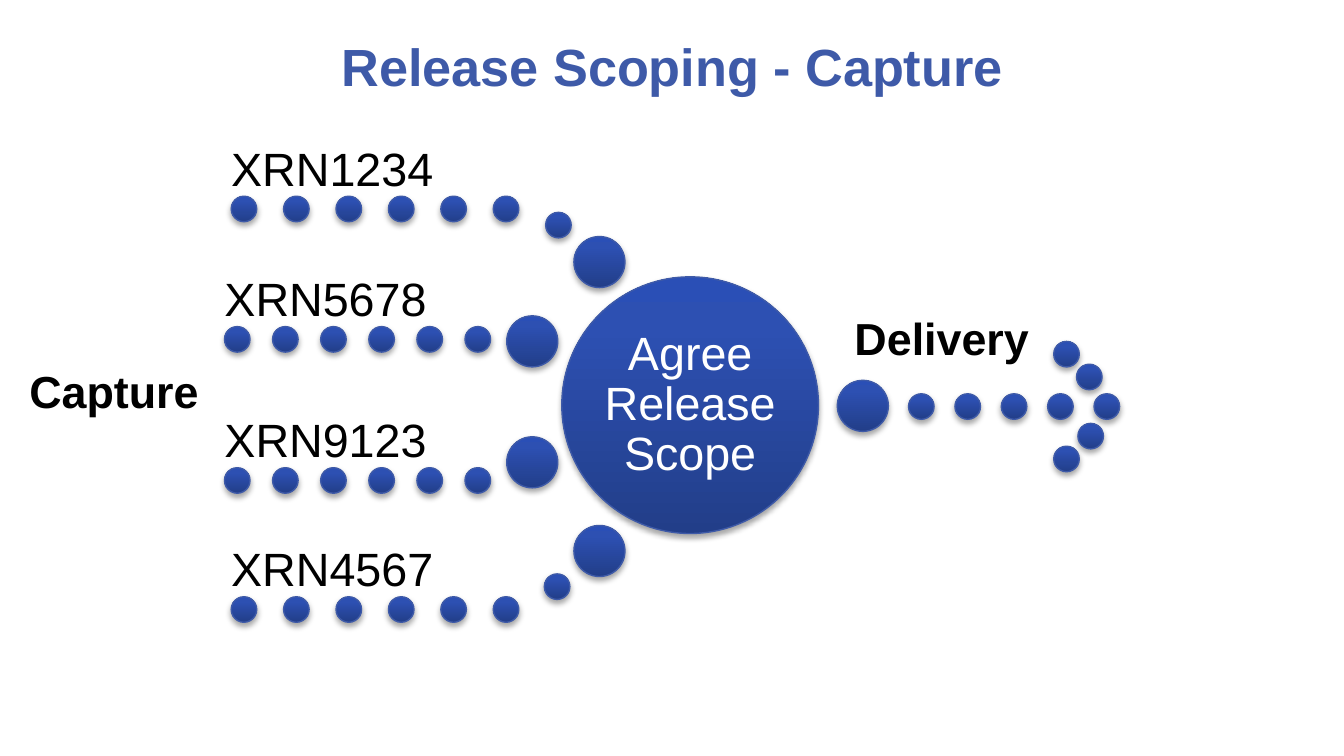
from lxml import etree
from pptx import Presentation
from pptx.dml.color import RGBColor
from pptx.enum.shapes import MSO_SHAPE
from pptx.enum.text import MSO_ANCHOR as Anchor, PP_ALIGN as Align
from pptx.oxml import parse_xml
from pptx.oxml.ns import nsdecls, qn
from pptx.util import Inches, Pt

SMALL, LARGE, HUB = 0.19, 0.38, 1.91
BLUE, BLACK, WHITE = "3E5AA8", "000000", "FFFFFF"
STOPS = [(0, "223E89"), (80, "2D50B2"), (100, "2A4FB6")]


def color(value):
    """Turn a hex string into a colour."""
    return RGBColor.from_string(value)


class ScopeSlide:
    """Holds the style and the slide being drawn."""

    def __init__(self, slide, font="Arial"):
        self.slide = slide
        self.font = font

    def ball(self, left, top, size=SMALL):
        """Draw a shaded circle with a soft shadow."""
        box = [Inches(value) for value in (left, top, size, size)]
        shape = self.slide.shapes.add_shape(MSO_SHAPE.OVAL, *box)
        shape.line.color.rgb = color(BLUE)
        shape.line.width = Pt(0.75)
        shape.shadow.inherit = False
        stops = "".join(
            f'<a:gs pos="{position * 1000}"><a:srgbClr val="{value}"/></a:gs>'
            for position, value in STOPS
        )
        gradient = parse_xml(
            f'<a:gradFill {nsdecls("a")} rotWithShape="1"><a:gsLst>{stops}</a:gsLst>'
            '<a:lin ang="16200000" scaled="0"/></a:gradFill>'
        )
        properties = shape.element.spPr
        properties.find(qn("a:ln")).addprevious(gradient)
        shadow = etree.SubElement(
            properties.find(qn("a:effectLst")), qn("a:outerShdw"),
            blurRad=str(Pt(3.1)), dist=str(Pt(1.8)), dir="5400000", rotWithShape="0",
        )
        shade = etree.SubElement(shadow, qn("a:srgbClr"), val=BLACK)
        etree.SubElement(shade, qn("a:alpha"), val="35000")

    def row(self, first, last, top, count):
        """Draw small balls evenly from the first left edge to the last."""
        step = (last - first) / (count - 1)
        for index in range(count):
            self.ball(first + index * step, top)

    def text(self, words, left, top, width, height, size, ink=BLACK, bold=False,
             align=Align.LEFT, anchor=Anchor.TOP, inset=None, spacing=None):
        """Write one paragraph in a text box."""
        box = [Inches(value) for value in (left, top, width, height)]
        frame = self.slide.shapes.add_textbox(*box).text_frame
        frame.word_wrap = True
        frame.vertical_anchor = anchor
        if inset is not None:
            frame.margin_left = frame.margin_right = Inches(inset)
            frame.margin_top = frame.margin_bottom = Inches(inset)
        paragraph = frame.paragraphs[0]
        paragraph.alignment = align
        if spacing:
            paragraph.line_spacing = spacing
        run = paragraph.add_run()
        run.text = words
        run.font.name = self.font
        run.font.size = Pt(size)
        run.font.bold = bold
        run.font.color.rgb = color(ink)

    def branch(self, name, first, last, top, width, joints):
        """Draw a named row of balls and the balls leading to the hub."""
        self.row(first, last, top, 6)
        for joint in joints:
            self.ball(*joint)
        self.text(name, first, top - 0.47, width, 0.47, 25,
                  anchor=Anchor.BOTTOM, inset=0, spacing=0.9)


def main():
    presentation = Presentation()
    presentation.slide_width = Inches(10)
    presentation.slide_height = presentation.slide_width * 9 // 16
    scope = ScopeSlide(presentation.slides.add_slide(presentation.slide_layouts[6]))

    scope.text("Release Scoping - Capture", 0.5, 0.14, 9, 0.7, 28, BLUE, True,
               Align.CENTER, Anchor.MIDDLE)

    scope.ball(6.23, 2.83, LARGE)
    scope.row(6.76, 8.14, 2.93, 5)
    for left, top in [(7.84, 2.54), (8.01, 2.71), (8.02, 3.15), (7.84, 3.32)]:
        scope.ball(left, top)

    scope.ball(4.18, 2.06, HUB)
    scope.text("Agree Release Scope", 4.46, 2.34, 1.35, 1.35, 25, WHITE,
               align=Align.CENTER, anchor=Anchor.MIDDLE, inset=0.03, spacing=0.9)

    branches = [
        ("XRN1234", 1.72, 3.67, 1.46, 2.13, [(4.06, 1.58), (4.27, 1.76, LARGE)]),
        ("XRN5678", 1.67, 3.46, 2.43, 1.98, [(3.77, 2.35, LARGE)]),
        ("XRN9123", 1.67, 3.46, 3.48, 1.98, [(3.77, 3.25, LARGE)]),
        ("XRN4567", 1.72, 3.67, 4.44, 2.13, [(4.05, 4.27), (4.27, 3.91, LARGE)]),
    ]
    for branch in branches:
        scope.branch(*branch)

    for words, left, top in [("Delivery", 6.26, 2.26), ("Capture", 0.12, 2.66)]:
        scope.text(words, left, top, 1.57, 0.5, 24, bold=True)

    presentation.save("out.pptx")


if __name__ == "__main__":
    main()
